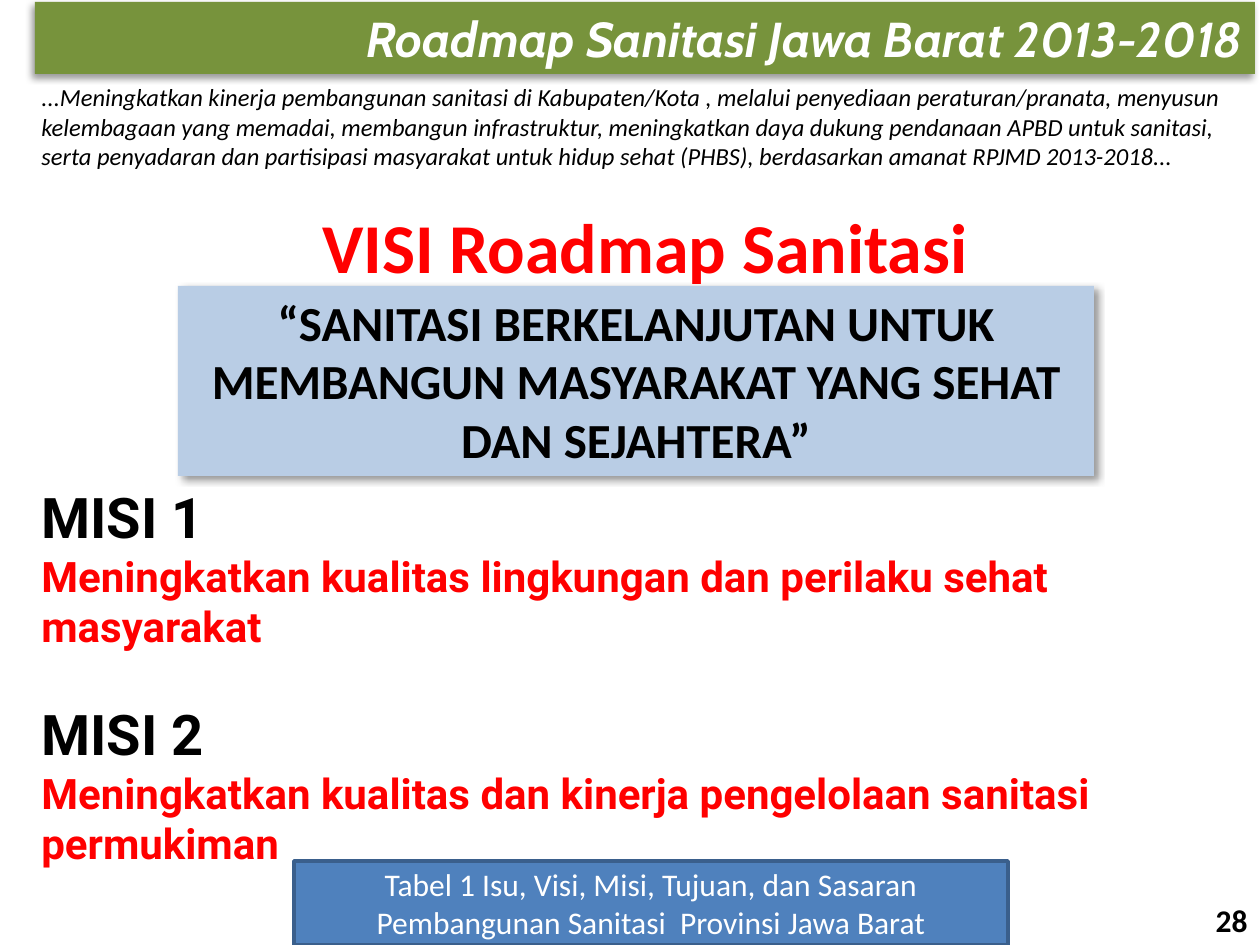
from dataclasses import dataclass
from typing import Optional

from lxml.etree import SubElement
from pptx import Presentation
from pptx.dml.color import RGBColor
from pptx.enum.shapes import MSO_SHAPE
from pptx.enum.text import MSO_ANCHOR as Anchor, MSO_AUTO_SIZE as AutoSize, PP_ALIGN as Align
from pptx.oxml.ns import qn
from pptx.util import Pt

EMU_PER_PX = 914400 / 126
BLACK, WHITE, RED = "000000", "FFFFFF", "FF0000"
GREEN, PALE_BLUE, BLUE, DARK_BLUE = "77933C", "B9CDE5", "4F81BD", "3A5F8C"


@dataclass
class Line:
    text: str
    size: int
    color: str = BLACK
    font: str = "Calibri"
    bold: bool = False
    italic: bool = False
    align: Align = Align.LEFT
    space_before: int = 0


@dataclass
class Block:
    """A text box, or a rectangle when it has a fill; box is left, top, width, height."""
    box: tuple[int, int, int, int]
    lines: list[Line]
    fill: Optional[str] = None
    outline: Optional[str] = None
    shadow_angle: Optional[int] = None
    anchor: Anchor = Anchor.TOP
    wrap: bool = True
    grow: bool = True


def px(length: int) -> int:
    return round(length * EMU_PER_PX)


def rgb(color: str) -> RGBColor:
    return RGBColor.from_string(color)


def add_shadow(shape, angle: int) -> None:
    effects = shape._element.spPr.find(qn("a:effectLst"))
    shadow = SubElement(effects, qn("a:outerShdw"), blurRad=str(Pt(4)), dist=str(Pt(3)),
                        dir=str(angle * 60000), algn="tl", rotWithShape="0")
    color = SubElement(shadow, qn("a:srgbClr"), val=BLACK)
    SubElement(color, qn("a:alpha"), val="40000")


def add_rectangle(slide, block: Block):
    shape = slide.shapes.add_shape(MSO_SHAPE.RECTANGLE, *map(px, block.box))
    shape.shadow.inherit = False
    shape.fill.solid()
    shape.fill.fore_color.rgb = rgb(block.fill)
    if block.outline:
        shape.line.color.rgb = rgb(block.outline)
        shape.line.width = Pt(2)
    else:
        shape.line.fill.background()
    if block.shadow_angle is not None:
        add_shadow(shape, block.shadow_angle)
    return shape


def write_line(paragraph, line: Line) -> None:
    paragraph.alignment = line.align
    if line.space_before:
        paragraph.space_before = Pt(line.space_before)
    run = paragraph.add_run()
    run.text = line.text
    font = run.font
    font.name, font.size = line.font, Pt(line.size)
    font.bold, font.italic = line.bold, line.italic
    font.color.rgb = rgb(line.color)


def add_block(slide, block: Block) -> None:
    if block.fill:
        shape = add_rectangle(slide, block)
    else:
        shape = slide.shapes.add_textbox(*map(px, block.box))
    frame = shape.text_frame
    frame.word_wrap = block.wrap
    frame.auto_size = AutoSize.SHAPE_TO_FIT_TEXT if block.grow else AutoSize.NONE
    frame.vertical_anchor = block.anchor
    for index, line in enumerate(block.lines):
        write_line(frame.add_paragraph() if index else frame.paragraphs[0], line)


def mission(number: int, goal: str, space_before: int = 0) -> list[Line]:
    return [
        Line(f"MISI {number}", 32, font="Roboto", bold=True, space_before=space_before),
        Line(goal, 24, RED, "Roboto", bold=True),
    ]


BLOCKS = [
    Block((178, 286, 916, 190), [
        Line("“SANITASI BERKELANJUTAN UNTUK MEMBANGUN MASYARAKAT YANG SEHAT DAN SEJAHTERA”",
             28, bold=True, align=Align.CENTER)], fill=PALE_BLUE, shadow_angle=45),
    Block((310, 197, 678, 97), [Line("VISI Roadmap Sanitasi", 40, RED, bold=True)], wrap=False),
    Block((29, 525, 1147, 301),
          mission(1, "Meningkatkan kualitas lingkungan dan perilaku sehat masyarakat")
          + mission(2, "Meningkatkan kualitas dan kinerja pengelolaan sanitasi permukiman", 28),
          anchor=Anchor.MIDDLE),
    Block((35, 2, 1220, 72), [
        Line("Roadmap Sanitasi Jawa Barat 2013-2018", 28, WHITE, "Cabin",
             bold=True, italic=True, align=Align.RIGHT)], fill=GREEN, shadow_angle=135),
    Block((29, 76, 1231, 102), [
        Line("...Meningkatkan kinerja pembangunan sanitasi di Kabupaten/Kota , melalui penyediaan "
             "peraturan/pranata, menyusun kelembagaan yang memadai, membangun infrastruktur, "
             "meningkatkan daya dukung pendanaan APBD untuk sanitasi, serta penyadaran dan "
             "partisipasi masyarakat untuk hidup sehat (PHBS), berdasarkan amanat RPJMD "
             "2013-2018...", 14, italic=True)]),
    Block((1166, 895, 94, 50), [Line("28", 18, bold=True, align=Align.RIGHT)]),
    Block((294, 861, 714, 84), [
        Line("Tabel 1 Isu, Visi, Misi, Tujuan, dan Sasaran Pembangunan Sanitasi  Provinsi Jawa Barat",
             18, WHITE, align=Align.CENTER)],
          fill=BLUE, outline=DARK_BLUE, anchor=Anchor.MIDDLE, grow=False),
]


def main() -> None:
    presentation = Presentation()
    presentation.slide_width, presentation.slide_height = px(1260), px(945)
    slide = presentation.slides.add_slide(presentation.slide_layouts[6])
    for block in BLOCKS:
        add_block(slide, block)
    presentation.save("out.pptx")


if __name__ == "__main__":
    main()
